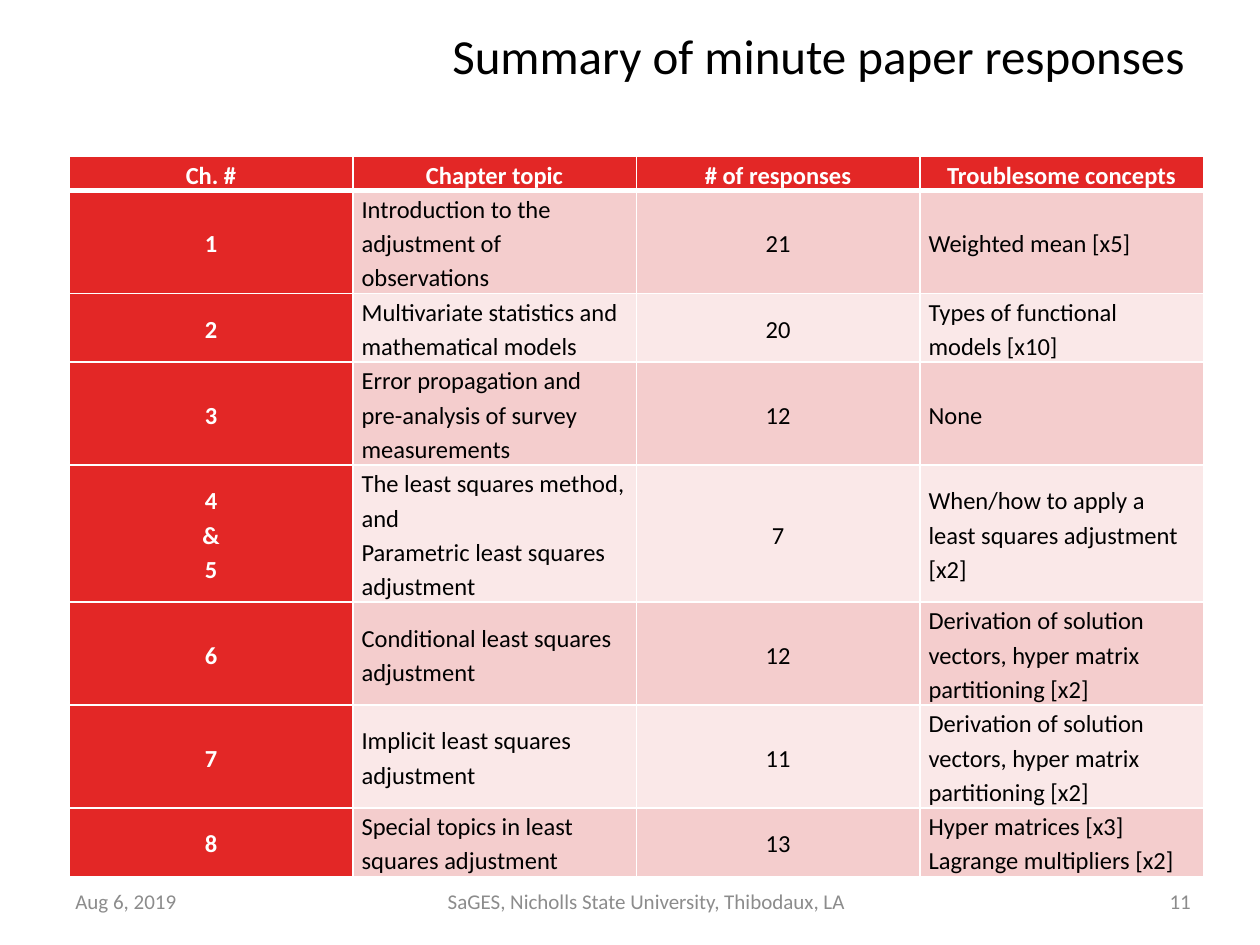
import dataclasses

import lxml.etree
import pptx
import pptx.dml.color
import pptx.enum.text
import pptx.oxml.ns
import pptx.util


@dataclasses.dataclass(frozen=True)
class Theme:
    font: str = "Calibri"
    title_size: int = 28
    table_size: int = 14
    footer_size: int = 12
    black: str = "000000"
    white: str = "FFFFFF"
    gray: str = "8C8C8C"
    red: str = "E32726"
    bands: tuple = ("F4CDCD", "FAE8E8")


theme = Theme()
align = pptx.enum.text.PP_ALIGN
middle = pptx.enum.text.MSO_ANCHOR.MIDDLE

presentation = pptx.Presentation()
presentation.slide_width = pptx.util.Inches(10)
presentation.slide_height = pptx.util.Inches(7.5)
column = presentation.slide_width / 100
row = presentation.slide_height / 75


def place(left, top, width, height):
    """Turn grid columns and rows into slide lengths."""
    return [int(left * column), int(top * row), int(width * column), int(height * row)]


def write(frame, text, size, color, alignment, bold=False, spacing=None):
    """Fill a text frame, one paragraph for each line of text."""
    frame.word_wrap = True
    frame.vertical_anchor = middle
    for index, line in enumerate(text.split("\n")):
        paragraph = frame.add_paragraph() if index else frame.paragraphs[0]
        paragraph.alignment = alignment
        paragraph.line_spacing = spacing
        run = paragraph.add_run()
        run.text = line
        run.font.name = theme.font
        run.font.size = pptx.util.Pt(size)
        run.font.bold = bold
        run.font.color.rgb = pptx.dml.color.RGBColor.from_string(color)


slide = presentation.slides.add_slide(presentation.slide_layouts.get_by_name("Title Only"))

# Title
title = slide.shapes.title
title.left, title.top, title.width, title.height = place(14.7, 0, 80.3, 8.7)
write(title.text_frame, "Summary of minute paper responses",
      theme.title_size, theme.black, align.RIGHT)

# Table of responses: lines of text in the tallest cell, then the four cells
responses = [
    (1, "Ch. #", "Chapter topic", "# of responses", "Troublesome concepts"),
    (3, "1", "Introduction to the adjustment of observations", "21", "Weighted mean [x5]"),
    (2, "2", "Multivariate statistics and mathematical models", "20",
     "Types of functional models [x10]"),
    (3, "3", "Error propagation and pre-analysis of survey measurements", "12", "None"),
    (4, "4\n&\n5", "The least squares method, and\nParametric least squares adjustment", "7",
     "When/how to apply a least squares adjustment [x2]"),
    (3, "6", "Conditional least squares adjustment", "12",
     "Derivation of solution vectors, hyper matrix partitioning [x2]"),
    (3, "7", "Implicit least squares adjustment", "11",
     "Derivation of solution vectors, hyper matrix partitioning [x2]"),
    (2, "8", "Special topics in least squares adjustment", "13",
     "Hyper matrices [x3]\nLagrange multipliers [x2]"),
]
line_height = 2.7
total_lines = sum(lines for lines, *_ in responses)
table = slide.shapes.add_table(
    len(responses), 4, *place(5.5, 12.4, 90, total_lines * line_height)).table
for table_column in table.columns:
    table_column.width = int(22.5 * column)

for row_index, (lines, *texts) in enumerate(responses):
    table.rows[row_index].height = int(lines * line_height * row)
    for column_index, text in enumerate(texts):
        cell = table.cell(row_index, column_index)
        heading = row_index == 0 or column_index == 0
        centered = heading or column_index == 2
        cell.margin_left = cell.margin_right = pptx.util.Inches(0.07)
        cell.margin_top = cell.margin_bottom = 0
        cell.vertical_anchor = middle
        write(cell.text_frame, text, theme.table_size,
              theme.white if heading else theme.black,
              align.CENTER if centered else align.LEFT, bold=heading, spacing=1.15)

        properties = cell._tc.get_or_add_tcPr()
        for side in ("lnL", "lnR", "lnT", "lnB"):
            below_header = (row_index, side) in ((0, "lnB"), (1, "lnT"))
            border = lxml.etree.SubElement(
                properties, pptx.oxml.ns.qn(f"a:{side}"),
                w=str(pptx.util.Pt(3 if below_header else 1)))
            fill = lxml.etree.SubElement(border, pptx.oxml.ns.qn("a:solidFill"))
            lxml.etree.SubElement(fill, pptx.oxml.ns.qn("a:srgbClr"), val=theme.white)
        cell.fill.solid()
        cell.fill.fore_color.rgb = pptx.dml.color.RGBColor.from_string(
            theme.red if heading else theme.bands[(row_index - 1) % 2])

# Footer
for text, left, width, alignment in (
    ("Aug 6, 2019", 5, 11.4, align.LEFT),
    ("SaGES, Nicholls State University, Thibodaux, LA", 22.2, 58.2, align.CENTER),
    ("11", 86.1, 9.4, align.RIGHT),
):
    footer = slide.shapes.add_textbox(*place(left, 69.5, width, 4))
    write(footer.text_frame, text, theme.footer_size, theme.gray, alignment)

presentation.save("out.pptx")
